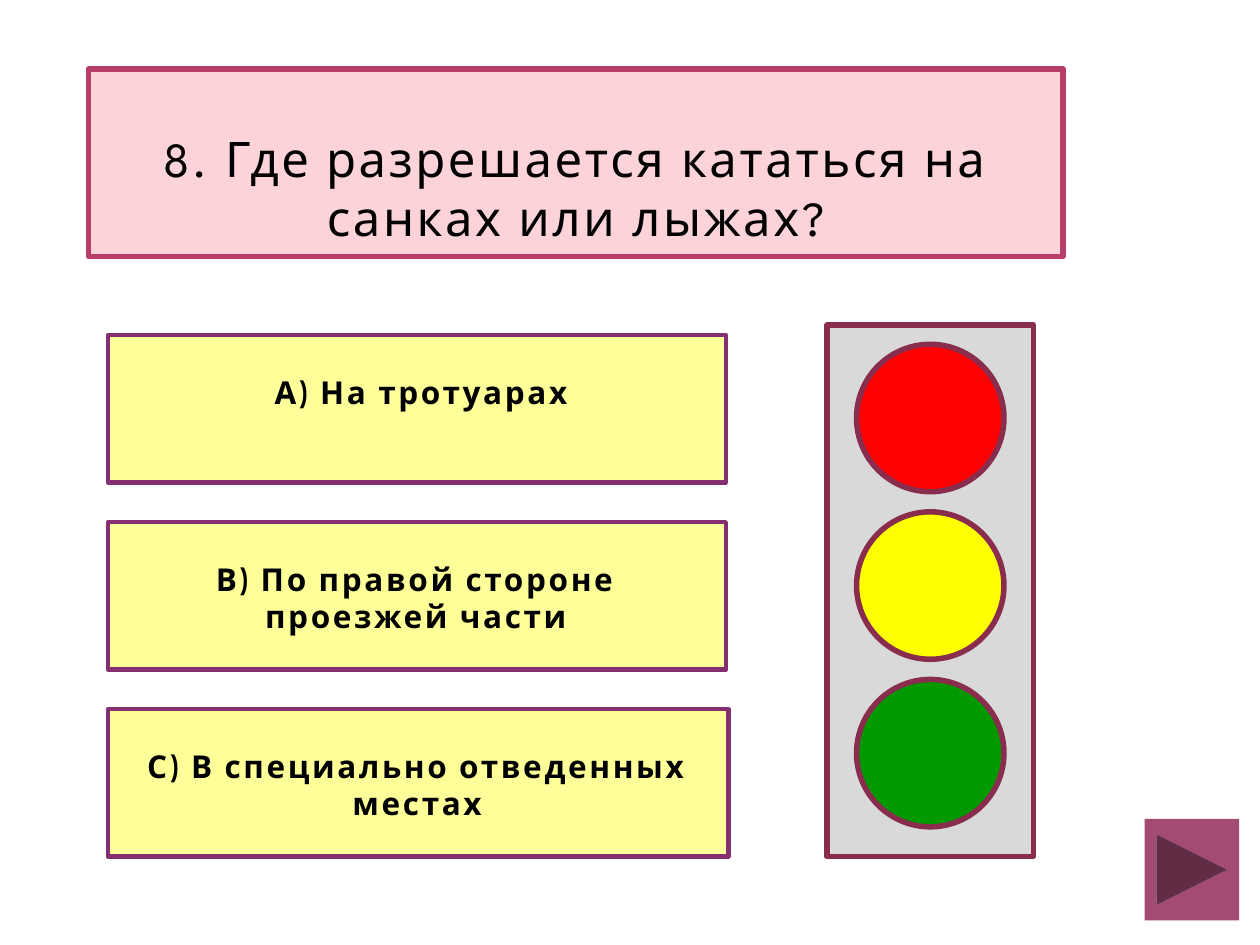
"""Build a quiz slide with a question, three answers and a traffic light."""
import pptx
import pptx.dml.color
import pptx.enum.shapes
import pptx.enum.text
import pptx.util

Pt = pptx.util.Pt
SHAPES = pptx.enum.shapes.MSO_SHAPE
ANCHORS = pptx.enum.text.MSO_ANCHOR


def color(value):
    return pptx.dml.color.RGBColor.from_string(value)


def write(box, text, font, size, pitch, bold=False, anchor=ANCHORS.TOP, insets=(0, 0, 0, 0)):
    frame = box.text_frame
    frame.word_wrap = True
    frame.vertical_anchor = anchor
    left, top, right, bottom = insets
    frame.margin_left, frame.margin_right = Pt(left), Pt(right)
    frame.margin_top, frame.margin_bottom = Pt(top), Pt(bottom)
    para = frame.paragraphs[0]
    para.alignment = pptx.enum.text.PP_ALIGN.CENTER
    para.line_spacing = Pt(pitch)
    span = para.add_run()
    span.text = text
    span.font.name = font
    span.font.size = Pt(size)
    span.font.bold = bold
    span.font.color.rgb = color("000000")
    span._r.get_or_add_rPr().set("spc", "150")


deck = pptx.Presentation()
deck.slide_width, deck.slide_height = Pt(720), Pt(540)
page = deck.slides.add_slide(deck.slide_layouts[6])

LIGHT_EDGE = "882D4D"
ANSWER_FILL, ANSWER_EDGE = "FFFF99", "852F73"
panels = [
    ("question", SHAPES.RECTANGLE, 50.5, 39.5, 557, 107, "FDD3DA", "B83D68", 3.15),
    ("case", SHAPES.RECTANGLE, 472.5, 185.75, 118, 303.75, "D9D9D9", LIGHT_EDGE, 3.15),
    ("next", SHAPES.ACTION_BUTTON_FORWARD_OR_NEXT, 654, 468, 54, 58, "A34B73", None, 0),
]
for row, width in enumerate((353, 353, 354.5)):
    panels.append((f"answer {row}", SHAPES.RECTANGLE, 61.75, 191.5 + 106.9 * row, width, 84.25,
                   ANSWER_FILL, ANSWER_EDGE, 2.5))
for row, lamp in enumerate(("FF0000", "FFFF00", "009900")):
    panels.append((f"lamp {row}", SHAPES.OVAL, 489.5, 196.75 + 95.75 * row, 84.25, 84.25,
                   lamp, LIGHT_EDGE, 3.15))

boxes = {}
for role, kind, left, top, width, height, fill, edge, weight in panels:
    box = page.shapes.add_shape(kind, Pt(left), Pt(top), Pt(width), Pt(height))
    box.shadow.inherit = False
    box.fill.solid()
    box.fill.fore_color.rgb = color(fill)
    if edge:
        box.line.color.rgb = color(edge)
        box.line.width = Pt(weight)
    else:
        box.line.fill.background()
    boxes[role] = box

write(boxes["question"], "8. Где разрешается кататься на санках или лыжах?",
      font="League Spartan", size=28, pitch=33.7, anchor=ANCHORS.BOTTOM, insets=(3.6, 0, 3.6, 6))

answers = (
    ("А) На тротуарах", 12, 7.2),
    ("В) По правой стороне проезжей части", 9.36, 10.5),
    ("С) В специально отведенных местах", 9.36, 10.5),
)
for row, (answer, left, right) in enumerate(answers):
    write(boxes[f"answer {row}"], answer, font="Cabin", size=18, pitch=21.1, bold=True,
          insets=(left, 22, right, 3.6))

deck.save("out.pptx")
